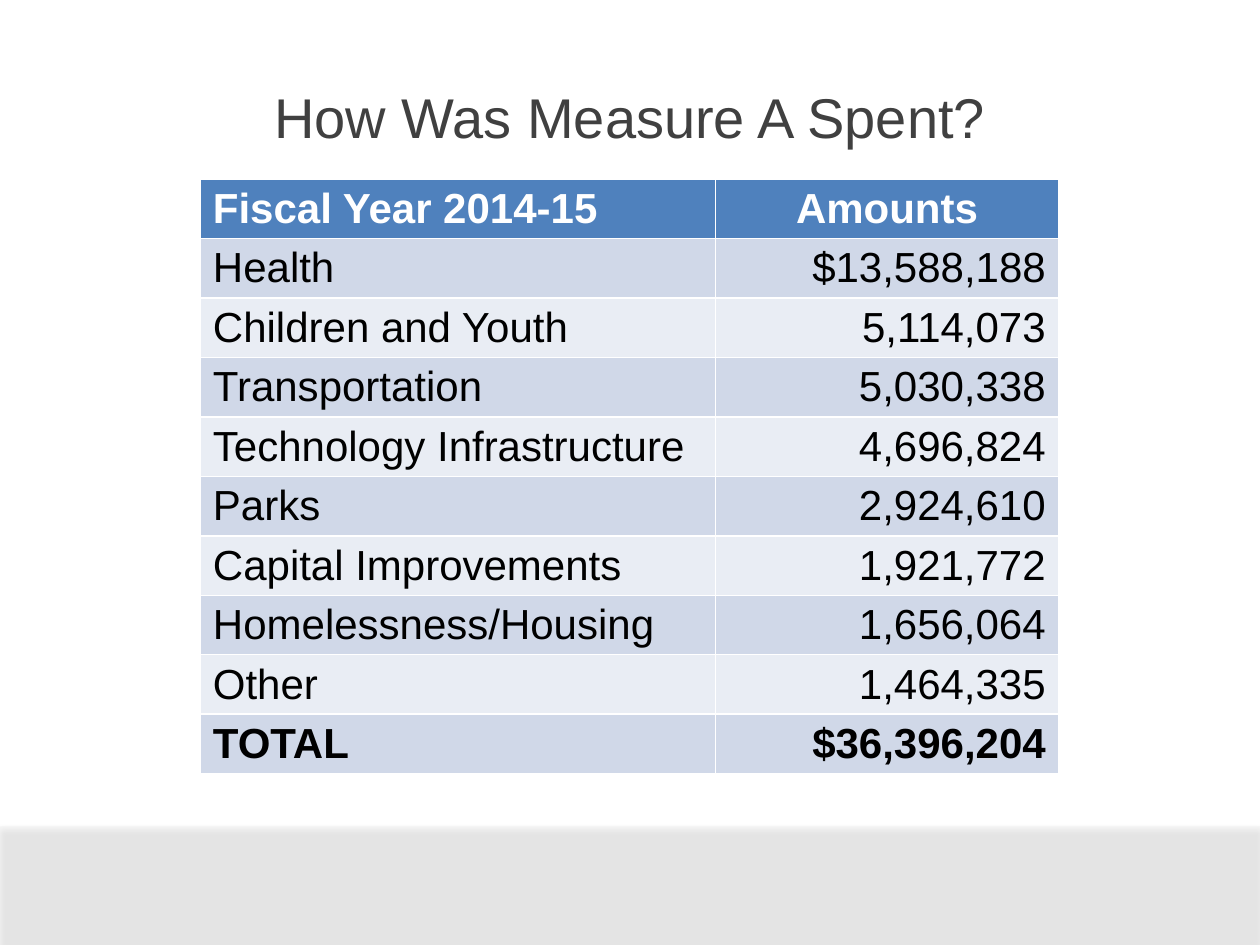
from lxml import etree
from pptx import Presentation
from pptx.dml.color import RGBColor
from pptx.enum.shapes import MSO_SHAPE
from pptx.enum.text import MSO_ANCHOR, PP_ALIGN
from pptx.oxml.ns import qn
from pptx.util import Inches, Pt

RECT = MSO_SHAPE.RECTANGLE
MIDDLE = MSO_ANCHOR.MIDDLE
LEFT, CENTER, RIGHT = PP_ALIGN.LEFT, PP_ALIGN.CENTER, PP_ALIGN.RIGHT


def color(code):
    return RGBColor.from_string(code)


def write(frame, text, size, code, align, bold=False):
    para = frame.paragraphs[0]
    para.alignment = align
    run = para.add_run()
    run.text = text
    run.font.name = "Arial"
    run.font.size = Pt(size)
    run.font.bold = bold
    run.font.color.rgb = color(code)


deck = Presentation()
deck.slide_width, deck.slide_height = Inches(10), Inches(7.5)
slide = deck.slides.add_slide(deck.slide_layouts[5])

title = slide.shapes.title
title.left, title.top = Inches(0.5), Inches(0.3)
title.width, title.height = Inches(9), Inches(1.25)
title.text_frame.vertical_anchor = MIDDLE
write(title.text_frame, "How Was Measure A Spent?", 32, "404040", CENTER)

band = slide.shapes.add_shape(RECT, 0, Inches(6.56), Inches(10), Inches(0.94))
band.fill.solid()
band.fill.fore_color.rgb = color("F2F2F2")
band.line.fill.background()
band.shadow.inherit = False
props = band.element.spPr
fill = props.find(qn("a:solidFill")).find(qn("a:srgbClr"))
etree.SubElement(fill, qn("a:alpha"), val="75000")
shade = etree.SubElement(
    props.find(qn("a:effectLst")), qn("a:outerShdw"),
    blurRad=str(Pt(3.1)), dist=str(Pt(1.8)), dir="5400000", rotWithShape="0")
black = etree.SubElement(shade, qn("a:srgbClr"), val="000000")
etree.SubElement(black, qn("a:alpha"), val="35000")
title.element.addprevious(band.element)

rows = [
    ("Fiscal Year 2014-15", "Amounts"),
    ("Health", "$13,588,188"),
    ("Children and Youth", "5,114,073"),
    ("Transportation", "5,030,338"),
    ("Technology Infrastructure", "4,696,824"),
    ("Parks", "2,924,610"),
    ("Capital Improvements", "1,921,772"),
    ("Homelessness/Housing", "1,656,064"),
    ("Other", "1,464,335"),
    ("TOTAL", "$36,396,204"),
]
last = len(rows) - 1
table = slide.shapes.add_table(
    len(rows), 2, Inches(1.59), Inches(1.42),
    Inches(6.81), Inches(0.41 * len(rows))).table
table.columns[0].width = Inches(4.09)
table.columns[1].width = Inches(2.72)

for r, row in enumerate(rows):
    head = r == 0
    back = "4F81BD" if head else ("E9EDF4", "D0D8E8")[r % 2]
    ink = "FFFFFF" if head else "000000"
    aligns = (LEFT, CENTER if head else RIGHT)
    for c, text in enumerate(row):
        cell = table.cell(r, c)
        cell.fill.solid()
        cell.fill.fore_color.rgb = color(back)
        write(cell.text_frame, text, 24, ink, aligns[c], r in (0, last))

deck.save("out.pptx")
